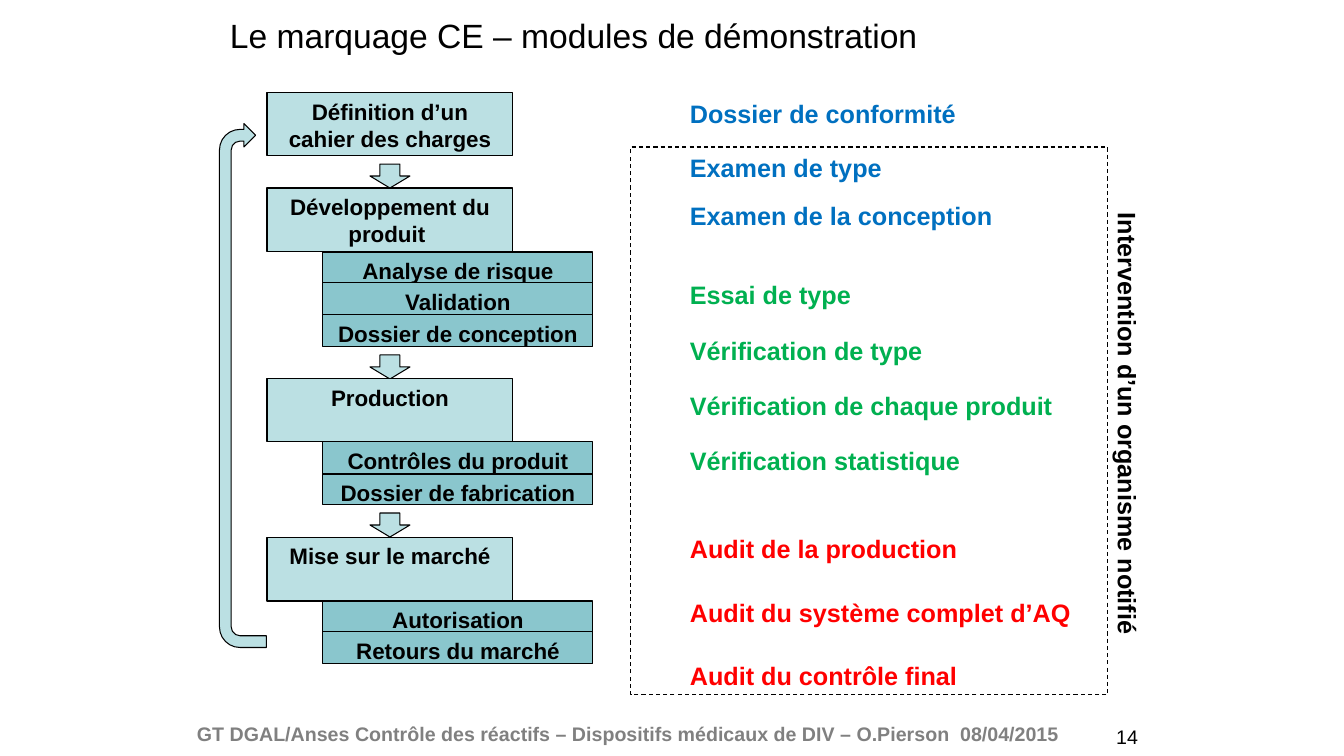
from dataclasses import dataclass

from pptx import Presentation
from pptx.dml.color import RGBColor
from pptx.enum.dml import MSO_LINE
from pptx.enum.shapes import MSO_SHAPE
from pptx.enum.text import MSO_ANCHOR, PP_ALIGN
from pptx.util import Emu, Pt


@dataclass(frozen=True)
class Theme:
    font: str = "Arial"
    ink: str = "000000"
    grey: str = "808080"
    step: str = "BBE0E3"
    task: str = "8AC6CD"
    blue: str = "0070C0"
    green: str = "00B050"
    red: str = "FF0000"
    title: int = 24
    module: int = 18
    box: int = 16
    small: int = 14
    line: float = 0.75


T = Theme()

TITLE = "Le marquage CE – modules de démonstration"
FOOTER = "GT DGAL/Anses Contrôle des réactifs – Dispositifs médicaux de DIV – O.Pierson  08/04/2015"
PAGE = "14"
NOTIFIED = "Intervention d’un organisme notifié"
STEPS = [
    ("Définition d’un cahier des charges", []),
    ("Développement du produit ", ["Analyse de risque", "Validation", "Dossier de conception"]),
    ("Production", ["Contrôles du produit", "Dossier de fabrication"]),
    ("Mise sur le marché", ["Autorisation", "Retours du marché"]),
]
MODULES = [
    (T.blue, [(93, "Dossier de conformité"), (147, "Examen de type"),
              (195, "Examen de la conception")]),
    (T.green, [(274, "Essai de type"), (330, "Vérification de type"),
               (385, "Vérification de chaque produit"), (440, "Vérification statistique")]),
    (T.red, [(528, "Audit de la production"), (592, "Audit du système complet d’AQ"),
             (655, "Audit du contrôle final")]),
]

FLOW_TOP, FLOW_H, FLOW_ROWS = 93, 571, 18
STEP_X, STEP_W = 267, 246
TASK_X, TASK_W = 323, 270
ARROW_W, ARROW_H = 40, 24
MODULE_X, MODULE_W, MODULE_H = 680, 415, 40


def px(n):
    return Emu(round(n * 9144000 / 1008))


def row_y(row):
    return FLOW_TOP + round(FLOW_H * row / FLOW_ROWS)


def write(sp, text, size, color=T.ink, bold=True, align=PP_ALIGN.LEFT):
    tf = sp.text_frame
    tf.word_wrap = True
    tf.vertical_anchor = MSO_ANCHOR.TOP
    p = tf.paragraphs[0]
    p.alignment = align
    r = p.add_run()
    r.text = text
    for name, value in {"name": T.font, "size": Pt(size), "bold": bold}.items():
        setattr(r.font, name, value)
    r.font.color.rgb = RGBColor.from_string(color)


def add_text(s, box, *args, **kwargs):
    sp = s.shapes.add_textbox(*map(px, box))
    write(sp, *args, **kwargs)
    return sp


def add_shape(s, kind, box, fill=None):
    sp = s.shapes.add_shape(kind, *map(px, box))
    sp.shadow.inherit = False
    if fill:
        sp.fill.solid()
        sp.fill.fore_color.rgb = RGBColor.from_string(fill)
    else:
        sp.fill.background()
    sp.line.color.rgb = RGBColor.from_string(T.ink)
    sp.line.width = Pt(T.line)
    return sp


def add_box(s, x, w, row, rows, fill, text):
    y = row_y(row)
    sp = add_shape(s, MSO_SHAPE.RECTANGLE, (x, y, w, row_y(row + rows) - y), fill)
    write(sp, text, T.box, align=PP_ALIGN.CENTER)


def add_flow(s):
    row = 0
    for step, tasks in STEPS:
        if row:
            x = STEP_X + (STEP_W - ARROW_W) // 2
            add_shape(s, MSO_SHAPE.DOWN_ARROW,
                      (x, row_y(row) - ARROW_H, ARROW_W, ARROW_H), T.step)
        add_box(s, STEP_X, STEP_W, row, 2, T.step, step)
        for i, task in enumerate(tasks):
            add_box(s, TASK_X, TASK_W, row + 2 + i, 1, T.task, task)
        row += 3 + len(tasks)
    sp = add_shape(s, MSO_SHAPE.U_TURN_ARROW, (-19, 362, 524, 47), T.step)
    sp.rotation = 270
    sp.adjustments[4] = 0.77


def add_modules(s):
    sp = add_shape(s, MSO_SHAPE.RECTANGLE, (631, 147, 477, 548))
    sp.line.dash_style = MSO_LINE.DASH
    for color, modules in MODULES:
        for y, text in modules:
            add_text(s, (MODULE_X, y, MODULE_W, MODULE_H), text, T.module, color)
    sp = add_text(s, (905, 406, 446, 40), NOTIFIED, T.module)
    sp.rotation = 90


def main():
    prs = Presentation()
    prs.slide_width, prs.slide_height = px(1344), px(756)
    s = prs.slides.add_slide(prs.slide_layouts[6])
    add_text(s, (220, 10, 725, 50), TITLE, T.title, bold=False)
    add_flow(s)
    add_modules(s)
    add_text(s, (187, 717, 900, 34), FOOTER, T.small, T.grey)
    add_text(s, (1065, 720, 83, 50), PAGE, T.small, bold=False, align=PP_ALIGN.RIGHT)
    prs.save("out.pptx")


if __name__ == "__main__":
    main()
